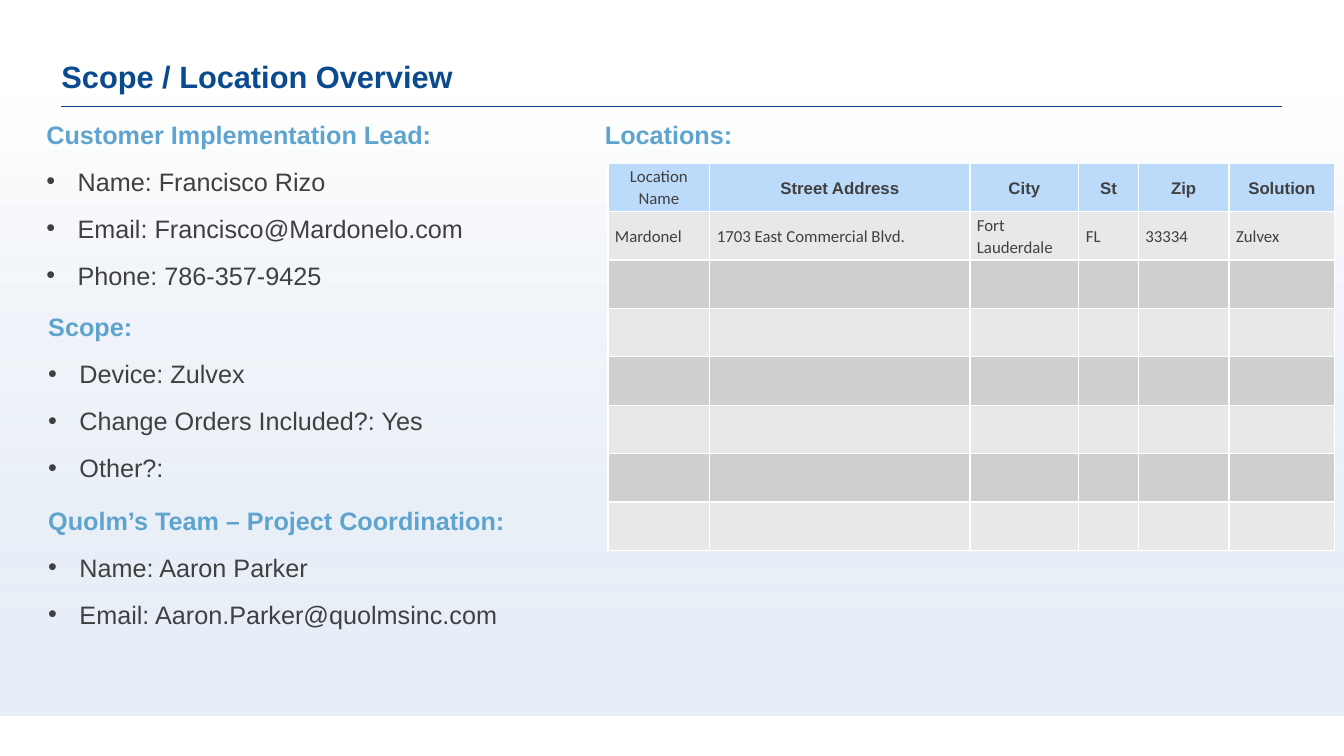
from dataclasses import dataclass

from lxml import etree
from pptx import Presentation
from pptx.dml.color import RGBColor as RGB
from pptx.enum.shapes import MSO_CONNECTOR as CONN, MSO_SHAPE as SHAPE
from pptx.enum.text import MSO_ANCHOR as ANCHOR, MSO_AUTO_SIZE as AUTO, PP_ALIGN as ALIGN
from pptx.oxml import parse_xml
from pptx.oxml.ns import nsdecls, qn
from pptx.util import Inches, Pt


@dataclass(frozen=True)
class Theme:
    navy: str = "0A4A8E"
    rule: str = "0A498E"
    sky: str = "5FA4CE"
    ink: str = "404040"
    white: str = "FFFFFF"
    mist: str = "D1DFF1"
    header: str = "BCDAFA"
    light: str = "E8E8E8"
    dark: str = "CFCFCF"
    font: str = "Arial"
    table_font: str = "Calibri"
    title_size: int = 22
    body_size: int = 18
    table_size: int = 12


T = Theme()


def add_run(p, text, size, color, bold=False, font=T.font):
    r = p.add_run()
    r.text = text
    r.font.size = Pt(size)
    r.font.name = font
    r.font.bold = bold
    r.font.color.rgb = RGB.from_string(color)


def add_box(s, left, top, width, height, inset_x=0.0, inset_y=0.0):
    tf = s.shapes.add_textbox(*map(Inches, (left, top, width, height))).text_frame
    tf.word_wrap = True
    tf.auto_size = AUTO.SHAPE_TO_FIT_TEXT
    tf.margin_left = tf.margin_right = Inches(inset_x)
    tf.margin_top = tf.margin_bottom = Inches(inset_y)
    return tf


prs = Presentation()
prs.slide_width, prs.slide_height = Inches(13.33), Inches(7.5)
s = prs.slides.add_slide(prs.slide_layouts[6])
s.background.fill.solid()
s.background.fill.fore_color.rgb = RGB.from_string(T.white)

panel = s.shapes.add_shape(SHAPE.RECTANGLE, Inches(0), Inches(0.96), Inches(13.33), Inches(6.14))
panel.shadow.inherit = False
panel.line.fill.background()
panel.fill.gradient()
panel.fill.gradient_angle = 270
for stop, color in zip(panel.fill.gradient_stops, (T.white, T.mist)):
    stop.color.rgb = RGB.from_string(color)
mist = list(panel.element.spPr.iter(qn("a:srgbClr")))[-1]
etree.SubElement(mist, qn("a:alpha")).set("val", "50000")

rule = s.shapes.add_connector(CONN.STRAIGHT, Inches(12.72), Inches(1.05), Inches(0.61), Inches(1.05))
rule.line.color.rgb = RGB.from_string(T.rule)
rule.line.width = Pt(0.25)
etree.SubElement(rule.element.spPr, qn("a:effectLst"))

tf = add_box(s, 0.61, 0.61, 12.11, 0.33)
tf.vertical_anchor = ANCHOR.BOTTOM
p = tf.paragraphs[0]
p.line_spacing = 0.9
add_run(p, "Scope / Location Overview", T.title_size, T.navy, True)

sections = [
    ((6, 1.18, 6.48, 0.3), "Locations:", []),
    ((0.46, 1.18, 5.31, 2.19), "Customer Implementation Lead:",
     ["Name: Francisco Rizo", "Email: Francisco@Mardonelo.com", "Phone: 786-357-9425"]),
    ((0.38, 3.04, 5.31, 1.82, 0.1, 0.05), "Scope:",
     ["Device: Zulvex", "Change Orders Included?: Yes", "Other?:"]),
    ((0.38, 4.96, 5.31, 1.35, 0.1, 0.05), "Quolm’s Team – Project Coordination:",
     ["Name: Aaron Parker", "Email: Aaron.Parker@quolmsinc.com"]),
]
for place, heading, items in sections:
    tf = add_box(s, *place)
    p = tf.paragraphs[0]
    p.space_after = Pt(12)
    add_run(p, heading, T.body_size, T.sky, True)
    for item in items:
        p = tf.add_paragraph()
        p.space_after = Pt(12)
        pPr = p._p.get_or_add_pPr()
        pPr.set("marL", str(Inches(0.31)))
        pPr.set("indent", str(-Inches(0.31)))
        etree.SubElement(pPr, qn("a:buFont")).set("typeface", T.font)
        etree.SubElement(pPr, qn("a:buChar")).set("char", "•")
        add_run(p, item, T.body_size, T.ink)

col_widths = [1.01, 2.58, 1.08, 0.59, 0.9, 1.05]
row_count = 8
locations = [
    ["Location Name", "Street Address", "City", "St", "Zip", "Solution"],
    ["Mardonel", "1703 East Commercial Blvd.", "Fort Lauderdale", "FL", "33334", "Zulvex"],
]
table = s.shapes.add_table(row_count, len(col_widths), Inches(6.03), Inches(1.62),
                           Inches(7.22), Inches(3.83)).table
for col, width in zip(table.columns, col_widths):
    col.width = Inches(width)
for i, row in enumerate(table.rows):
    row.height = Inches(0.48)
    fill = T.header if i == 0 else T.light if i % 2 else T.dark
    for j, cell in enumerate(row.cells):
        cell.fill.solid()
        cell.fill.fore_color.rgb = RGB.from_string(fill)
        cell.vertical_anchor = ANCHOR.MIDDLE
        cell.margin_left = cell.margin_right = Inches(0.07)
        cell.margin_top = cell.margin_bottom = Inches(0)
        tcPr = cell._tc.get_or_add_tcPr()
        for k, side in enumerate(("lnL", "lnR", "lnT", "lnB")):
            tcPr.insert(k, parse_xml(
                f'<a:{side} {nsdecls("a")} w="{Pt(1)}"><a:solidFill>'
                f'<a:srgbClr val="{T.white}"/></a:solidFill></a:{side}>'))
        if i < len(locations):
            p = cell.text_frame.paragraphs[0]
            p.line_spacing = 1.07
            p.alignment = ALIGN.CENTER if i == 0 else ALIGN.LEFT
            bold = i == 0 and j > 0
            add_run(p, locations[i][j], T.table_size, T.ink, bold, T.font if bold else T.table_font)

prs.save("out.pptx")
